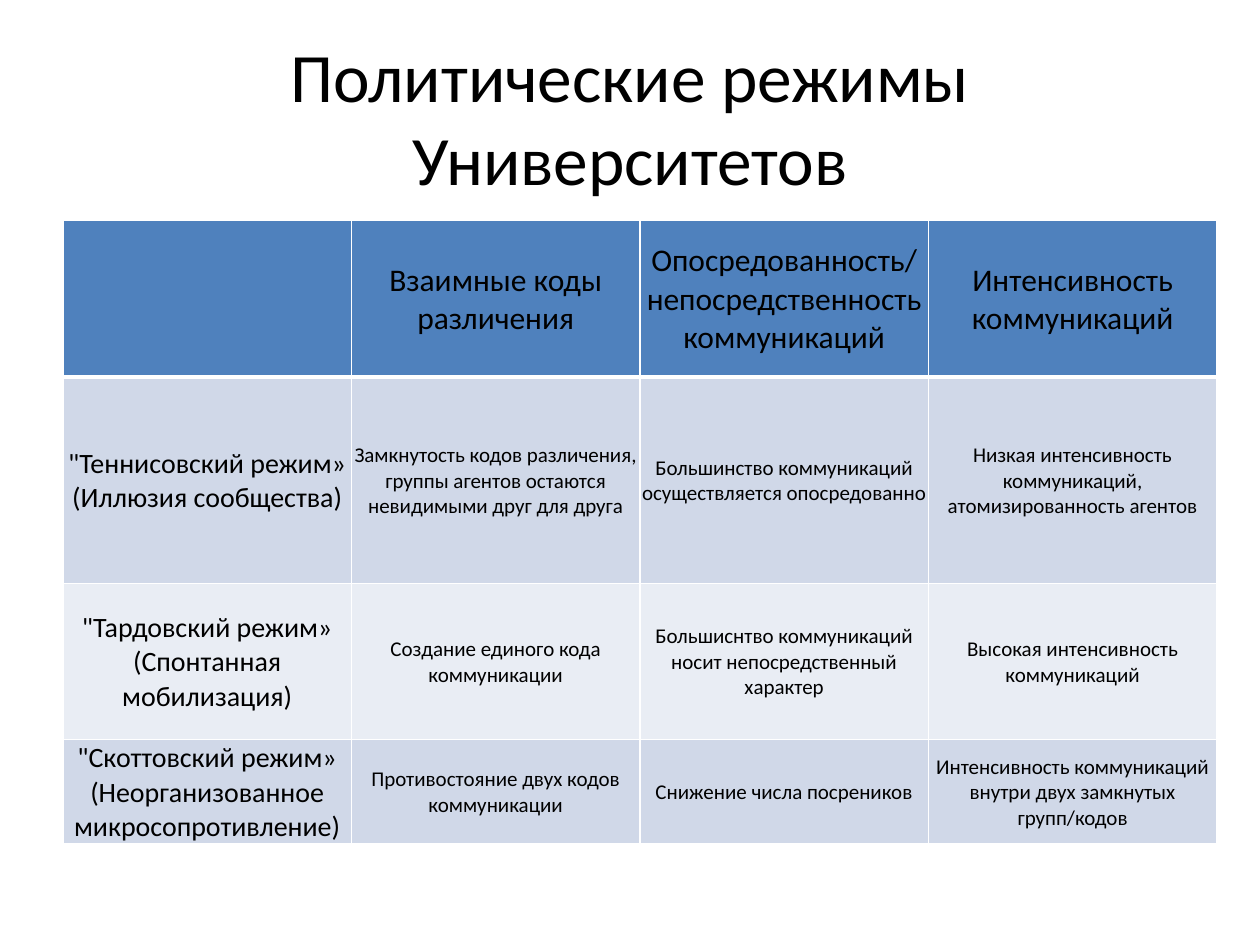
from dataclasses import dataclass

from lxml.etree import SubElement
from pptx import Presentation
from pptx.dml.color import RGBColor
from pptx.enum.text import MSO_ANCHOR, PP_ALIGN
from pptx.oxml.ns import qn
from pptx.util import Cm, Pt

BLACK = RGBColor(0x00, 0x00, 0x00)
WHITE = RGBColor(0xFF, 0xFF, 0xFF)
BLUE = RGBColor(0x4F, 0x81, 0xBD)
MIST = RGBColor(0xD0, 0xD8, 0xE8)
PALE = RGBColor(0xE9, 0xED, 0xF4)
FONT = "Calibri"


@dataclass(frozen=True)
class Row:
    height: float
    fill: RGBColor
    sizes: tuple[int, int]
    cells: tuple[str, ...]


ROWS = [
    Row(3.15, BLUE, (18, 18), (
        "",
        "Взаимные коды различения",
        "Опосредованность/непосредственность коммуникаций",
        "Интенсивность коммуникаций",
    )),
    Row(4.16, MIST, (16, 12), (
        "\"Теннисовский режим»\n(Иллюзия сообщества)",
        "Замкнутость кодов различения, группы агентов остаются невидимыми друг для друга",
        "Большинство коммуникаций осуществляется опосредованно",
        "Низкая интенсивность коммуникаций, атомизированность агентов",
    )),
    Row(3.15, PALE, (16, 12), (
        "\"Тардовский режим»\n(Спонтанная мобилизация)",
        "Создание единого кода коммуникации",
        "Большиснтво коммуникаций носит непосредственный характер",
        "Высокая интенсивность коммуникаций",
    )),
    Row(2.08, MIST, (16, 12), (
        "\"Скоттовский режим»\n(Неорганизованное микросопротивление)",
        "Противостояние двух кодов коммуникации",
        "Снижение числа посреников",
        "Интенсивность коммуникаций внутри двух замкнутых групп/кодов",
    )),
]


def write(frame, text: str, size: float) -> None:
    frame.word_wrap = True
    for index, line in enumerate(text.split("\n")):
        para = frame.add_paragraph() if index else frame.paragraphs[0]
        para.alignment = PP_ALIGN.CENTER
        if line:
            run = para.add_run()
            run.text = line
            run.font.name = FONT
            run.font.size = Pt(size)
            run.font.bold = False
            run.font.color.rgb = BLACK


def edge(cell, side: str, width: float) -> None:
    props = cell._tc.get_or_add_tcPr()
    line = SubElement(props, qn(f"a:ln{side}"), w=str(Pt(width)))
    fill = SubElement(line, qn("a:solidFill"))
    SubElement(fill, qn("a:srgbClr"), val=str(WHITE))


def style(cell, fill: RGBColor, top: float, bottom: float) -> None:
    for side, width in (("L", 1), ("R", 1), ("T", top), ("B", bottom)):
        edge(cell, side, width)
    cell.fill.solid()
    cell.fill.fore_color.rgb = fill
    cell.vertical_anchor = MSO_ANCHOR.MIDDLE
    cell.margin_left = cell.margin_right = cell.margin_top = Cm(0.03)
    cell.margin_bottom = Cm(0)


def add_title(slide, text: str) -> None:
    title = slide.shapes.title
    title.left, title.top = Cm(1.27), Cm(0.76)
    title.width, title.height = Cm(22.86), Cm(3.18)
    title.text_frame.vertical_anchor = MSO_ANCHOR.MIDDLE
    write(title.text_frame, text, 39.6)


def add_grid(slide, rows: list[Row]) -> None:
    count = len(rows[0].cells)
    height = sum(row.height for row in rows)
    table = slide.shapes.add_table(
        len(rows), count, Cm(1.27), Cm(4.45), Cm(23.26), Cm(height)
    ).table
    for index, row in enumerate(rows):
        table.rows[index].height = Cm(row.height)
        for col, text in enumerate(row.cells):
            cell = table.cell(index, col)
            style(cell, row.fill, 3 if index == 1 else 1, 3 if index == 0 else 1)
            write(cell.text_frame, text, row.sizes[min(col, 1)])


def main() -> None:
    deck = Presentation()
    deck.slide_width, deck.slide_height = Cm(25.4), Cm(19.05)
    slide = deck.slides.add_slide(deck.slide_layouts[5])
    add_title(slide, "Политические режимы Университетов")
    add_grid(slide, ROWS)
    deck.save("out.pptx")


if __name__ == "__main__":
    main()
